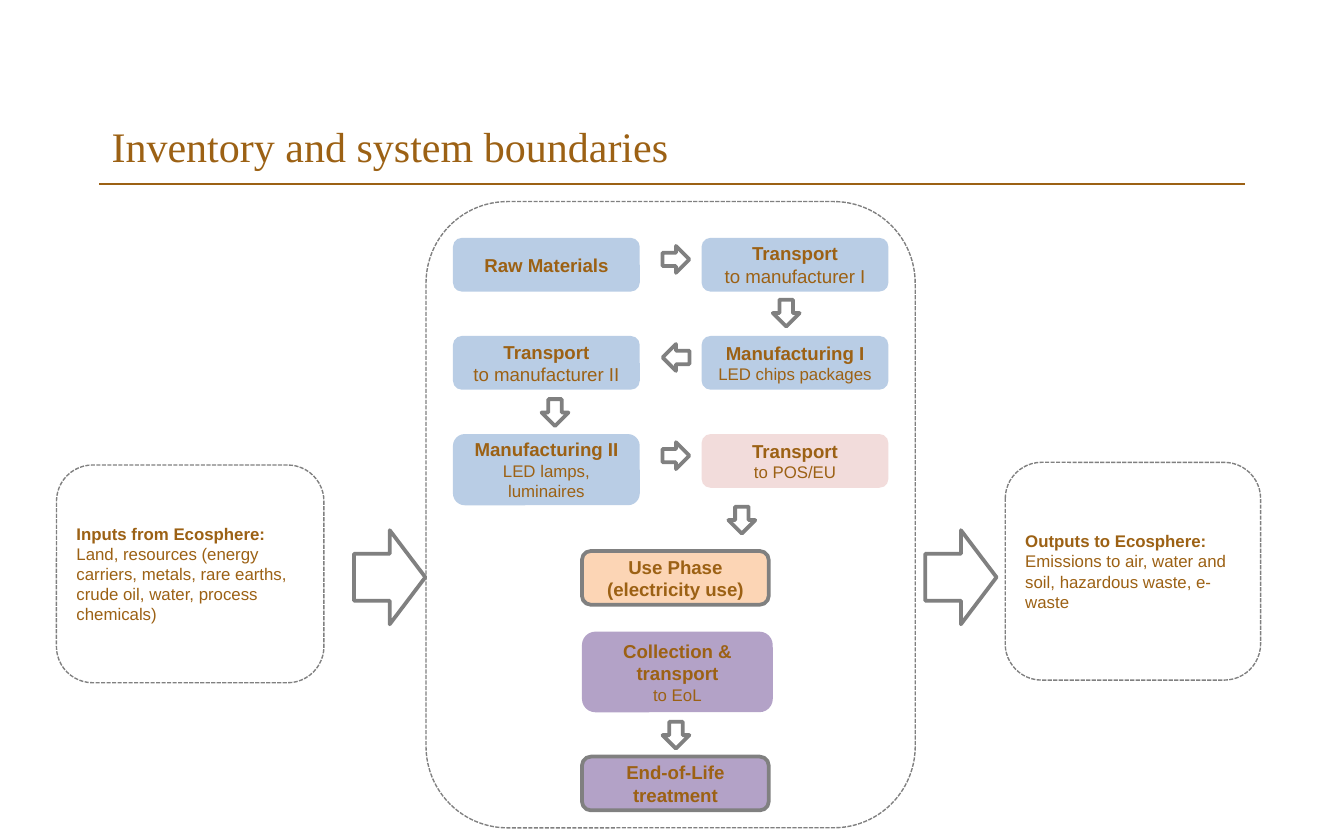
from pptx import Presentation
from pptx.dml.color import RGBColor
from pptx.enum.dml import MSO_LINE
from pptx.enum.shapes import MSO_CONNECTOR, MSO_SHAPE
from pptx.enum.text import MSO_ANCHOR, PP_ALIGN
from pptx.oxml.ns import qn
from pptx.util import Inches, Pt

ROUNDED, DOWN_ARROW = MSO_SHAPE.ROUNDED_RECTANGLE, MSO_SHAPE.DOWN_ARROW
STRAIGHT, DASH = MSO_CONNECTOR.STRAIGHT, MSO_LINE.SQUARE_DOT
LEFT, CENTER = PP_ALIGN.LEFT, PP_ALIGN.CENTER
MIDDLE, BOTTOM = MSO_ANCHOR.MIDDLE, MSO_ANCHOR.BOTTOM

THEME = {
    "brown": RGBColor.from_string("9C6114"),
    "gray": RGBColor.from_string("808080"),
    "white": RGBColor.from_string("FFFFFF"),
    "blue": RGBColor.from_string("B9CDE5"),
    "pink": RGBColor.from_string("F2DCDB"),
    "orange": RGBColor.from_string("FCD5B5"),
    "purple": RGBColor.from_string("B3A2C7"),
    "title": Pt(22.5), "label": Pt(10), "detail": Pt(9),
    "thin": Pt(0.75), "thick": Pt(2),
    "heading_font": "Times New Roman", "body_font": "Arial",
}

presentation = Presentation()
presentation.slide_width, presentation.slide_height = Inches(10), Inches(6.25)
slide = presentation.slides.add_slide(presentation.slide_layouts[5])
CELL = presentation.slide_width / 100  # square grid, 100 cells across


def add_shape(kind, box, fill=None, line_width=None, dash=None, rotation=0):
    """Add a shape whose box (left, top, width, height) is in grid cells."""
    shape = slide.shapes.add_shape(kind, *(round(cells * CELL) for cells in box))
    shape.shadow.inherit = False
    shape.rotation = rotation
    if fill:
        shape.fill.solid()
        shape.fill.fore_color.rgb = THEME[fill]
    else:
        shape.fill.background()
    if line_width:
        shape.line.color.rgb = THEME["gray"]
        shape.line.width = THEME[line_width]
        if dash:
            shape.line.dash_style = dash
    else:
        shape.line.fill.background()
    return shape


def write_text(shape, lines, alignment, anchor=MIDDLE):
    """Write one paragraph per (text, size, bold, font) line."""
    frame = shape.text_frame
    margins = {"margin_left": 0.07, "margin_right": 0.07,
               "margin_top": 0.04, "margin_bottom": 0.04}
    for name, value in margins.items():
        setattr(frame, name, Inches(value))
    frame.word_wrap = True
    frame.vertical_anchor = anchor
    for index, (text, size, bold, font) in enumerate(lines):
        paragraph = frame.paragraphs[0] if index == 0 else frame.add_paragraph()
        paragraph.alignment = alignment
        run = paragraph.add_run()
        run.text = text
        run.font.color.rgb = THEME["brown"]
        formats = {"size": THEME[size], "bold": bold, "name": THEME[font]}
        for name, value in formats.items():
            setattr(run.font, name, value)


# Title and rule
title = slide.shapes.title
title_box = {"left": 7.6, "top": 5, "width": 85.8, "height": 8.1}
for name, cells in title_box.items():
    setattr(title, name, round(cells * CELL))
write_text(title, [("Inventory and system boundaries", "title", False, "heading_font")],
           LEFT, BOTTOM)

rule = slide.shapes.add_connector(
    STRAIGHT, *(round(cells * CELL) for cells in (7.4, 13.7, 92.6, 13.7)))
rule.line.color.rgb = THEME["brown"]
rule.line.width = THEME["thin"]
rule_properties = rule._element.spPr
rule_properties.append(rule_properties.makeelement(qn("a:effectLst"), {}))

# System boundary and the ecosphere on both sides
add_shape(ROUNDED, (31.7, 15, 36.4, 46.6), None, "thin", DASH)
ecosphere = [
    ((4.2, 34.6, 19.9, 16.2), "Inputs from Ecosphere:",
     "Land, resources (energy carriers, metals, rare earths, crude oil, water, "
     "process chemicals)"),
    ((74.8, 34.4, 19, 16.2), "Outputs to Ecosphere:",
     "Emissions to air, water and soil, hazardous waste, e-waste"),
]
for box, heading, content in ecosphere:
    panel = add_shape(ROUNDED, box, "white", "thin", DASH)
    write_text(panel, [(heading, "detail", True, "body_font"),
                       (content, "detail", False, "body_font")], LEFT)
for left in (25.5, 68):
    add_shape(DOWN_ARROW, (left, 40.3, 7, 5.3), "white", "thick", rotation=270)

# Process steps: two columns of three rows, then one middle column
COLUMNS = [33.7, 52.2]
ROWS = [17.7 + 7.3 * row for row in range(3)]
MIDDLE_COLUMN = 43.3
STEP_WIDTH, STEP_HEIGHT = 13.9, 4
steps = [
    (COLUMNS[0], ROWS[0], STEP_WIDTH, STEP_HEIGHT, "blue", None,
     "Raw Materials", None, None),
    (COLUMNS[1], ROWS[0], STEP_WIDTH, STEP_HEIGHT, "blue", None,
     "Transport", "to manufacturer I", "label"),
    (COLUMNS[1], ROWS[1], STEP_WIDTH, STEP_HEIGHT, "blue", None,
     "Manufacturing I", "LED chips packages", "detail"),
    (COLUMNS[0], ROWS[1], STEP_WIDTH, STEP_HEIGHT, "blue", None,
     "Transport", "to manufacturer II", "label"),
    (COLUMNS[0], ROWS[2], STEP_WIDTH, 5.3, "blue", None,
     "Manufacturing II", "LED lamps, luminaires", "detail"),
    (COLUMNS[1], ROWS[2], STEP_WIDTH, STEP_HEIGHT, "pink", None,
     "Transport", "to POS/EU", "detail"),
    (MIDDLE_COLUMN, 41, STEP_WIDTH, STEP_HEIGHT, "orange", "thick",
     "Use Phase (electricity use)", None, None),
    (MIDDLE_COLUMN, 47, 14.2, 6, "purple", None,
     "Collection & transport", "to EoL", "detail"),
    (MIDDLE_COLUMN, 56.3, STEP_WIDTH, STEP_HEIGHT, "purple", "thick",
     "End-of-Life treatment", None, None),
]
for left, top, width, height, fill, line_width, label, detail, detail_size in steps:
    step = add_shape(ROUNDED, (left, top, width, height), fill, line_width)
    lines = [(label, "label", True, "body_font")]
    if detail:
        lines.append((detail, detail_size, False, "body_font"))
    write_text(step, lines, CENTER)

# Small arrows: across each row, then down between rows
ARROW_SIZE, GUTTER = 2, 49.3
arrows = [(GUTTER, top + 0.6, rotation) for top, rotation in zip(ROWS, (270, 90, 270))]
arrows += [(57.5, ROWS[0] + 4.6, 0), (40.3, ROWS[1] + 4.7, 0),
           (54.2, ROWS[2] + 5.4, 0), (GUTTER, 53.7, 0)]
for left, top, rotation in arrows:
    add_shape(DOWN_ARROW, (left, top, ARROW_SIZE, ARROW_SIZE), "white", "thick",
              rotation=rotation)

presentation.save("out.pptx")
